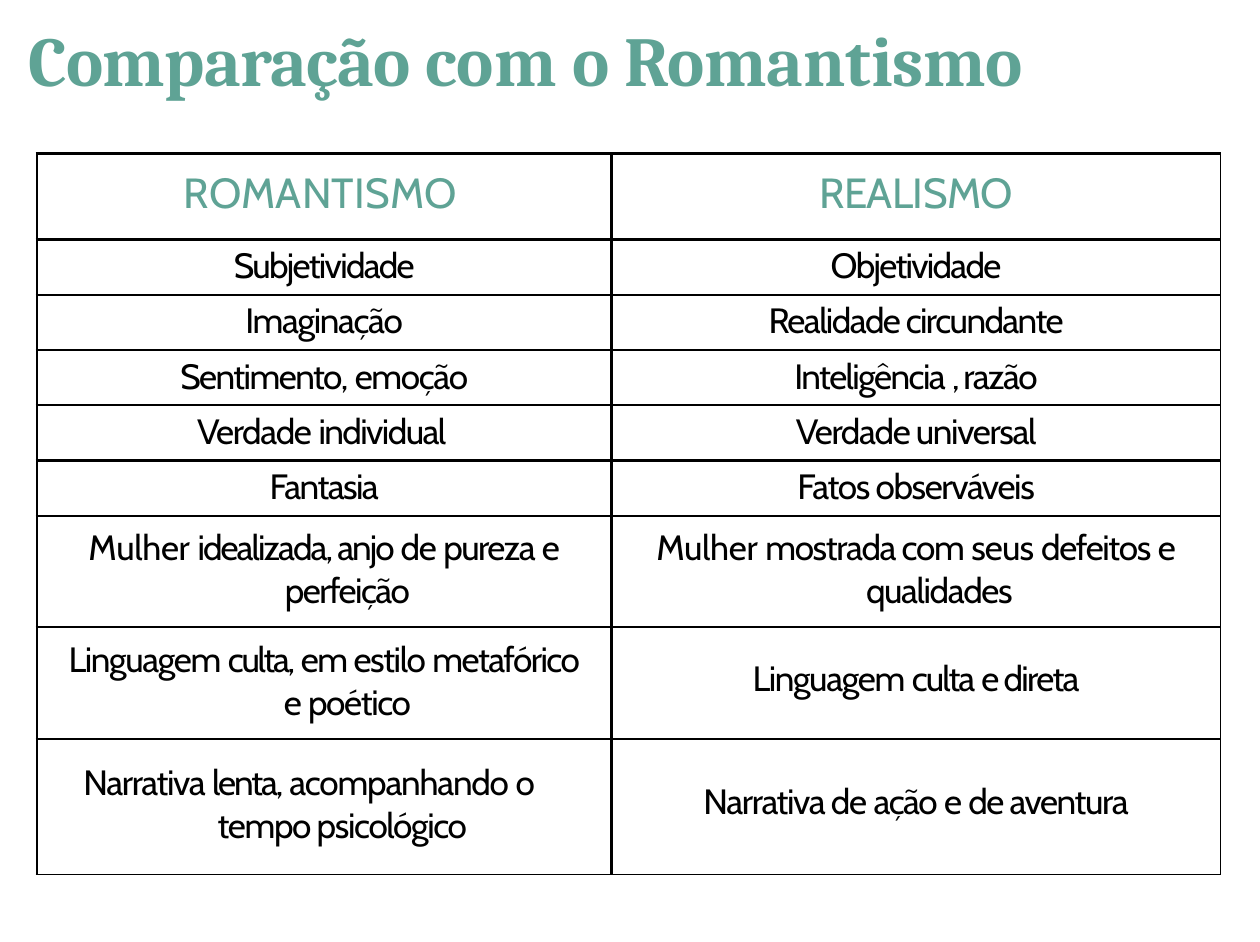
from dataclasses import dataclass

from lxml.etree import SubElement
from pptx import Presentation
from pptx.dml.color import RGBColor
from pptx.enum.text import MSO_ANCHOR, MSO_AUTO_SIZE, PP_ALIGN
from pptx.oxml.ns import qn
from pptx.slide import Slide
from pptx.table import _Cell
from pptx.text.text import _Paragraph
from pptx.util import Emu, Pt

SCALE = 6350


@dataclass(frozen=True)
class Theme:
    accent: str = "5FA395"
    ink: str = "000000"
    serif: str = "Cambria"
    sans: str = "Cabin"
    title: int = 40
    head: int = 24
    body: int = 20
    thick: float = 1.5
    thin: float = 1


@dataclass(frozen=True)
class Run:
    text: str
    space: float


@dataclass(frozen=True)
class Item:
    lines: tuple[tuple[Run, ...], ...]
    top: int = 6
    shift: int = 53
    hang: int = 0
    tail: int = 0


@dataclass(frozen=True)
class Row:
    high: int
    left: Item
    right: Item


THEME = Theme()


def px(count: int) -> Emu:
    return Emu(count * SCALE)


def line(*parts: str | float) -> tuple[Run, ...]:
    return tuple(Run(text, space) for text, space in zip(parts[::2], parts[1::2]))


def short(text: str, space: float, top: int = 6, tail: int = 0) -> Item:
    return Item((line(text, space),), top, tail=tail)


TITLE = line("Comparação ", -0.4, "com ", 0.2, "o ", -0.7, "Romantismo", -0.1)
WIDTHS = (655, 694)
ROWS = (
    Row(98, short("ROMANTISMO", 0.1, 17, 9), short("REALISMO", -0.3, 17)),
    Row(63, short("Subjetividade", -1), short("Objetividade", -1)),
    Row(63, short("Imaginação", -0.8), short("Realidade circundante", -0.9)),
    Row(
        63,
        Item((line("Sentimento, ", -0.9, "emoção", -0.8),)),
        Item((line("Inteligência ", -0.9, ", ", -2.4, "razão", -0.9),)),
    ),
    Row(
        63,
        Item((line("Verdade ", -0.8, "individual", -0.9),), tail=6),
        short("Verdade universal", -0.8),
    ),
    Row(63, short("Fantasia", -0.9), short("Fatos observáveis", -0.8)),
    Row(
        127,
        Item((
            line("Mulher ", -0.2, "idealizada, anjo ", -1.1, "de ", -0.8,
                 "pureza ", -0.9, "e", -1),
            line("perfeição", -0.9),
        ), top=13),
        Item((
            line("Mulher ", -0.2, "mostrada com ", -0.8, "seus ", -0.5,
                 "defeitos ", -0.8, "e", -1),
            line("qualidades", -0.8),
        ), top=13),
    ),
    Row(
        128,
        Item((
            line("Linguagem ", -0.8, "culta, ", -1.3, "em estilo ", -0.8,
                 "metafórico", -0.9),
            line("e ", -1, "poético", -0.8),
        ), top=13),
        Item((line("Linguagem ", -0.8, "culta ", -1.1, "e direta", -1),), top=35),
    ),
    Row(
        154,
        Item((
            line("Narrativa ", -0.8, "lenta, ", -1.2, "acompanhando ", -0.7,
                 "o ", -0.2, "tempo psicológico", -0.8),
        ), top=26, shift=206, hang=153),
        Item((
            line("Narrativa de ", -0.8, "ação ", -0.9, "e ", -1, "de aventura", -0.8),
        ), top=47),
    ),
)


def write(par: _Paragraph, text: str, *, size: int, color: str, face: str,
          space: float, bold: bool = False) -> None:
    run = par.add_run()
    run.text = text
    font = run.font
    font.size = Pt(size)
    font.name = face
    font.bold = bold
    font.color.rgb = RGBColor.from_string(color)
    run._r.get_or_add_rPr().set("spc", str(round(space * 100)))


def indent(par: _Paragraph, **sides: int) -> None:
    props = par._p.get_or_add_pPr()
    for side, size in sides.items():
        props.set(side, str(px(size)))


def edge(cell: _Cell, side: str, width: float) -> None:
    rule = SubElement(cell._tc.get_or_add_tcPr(), qn(f"a:ln{side}"), w=str(Pt(width)))
    fill = SubElement(rule, qn("a:solidFill"))
    SubElement(fill, qn("a:srgbClr"), val=THEME.ink)


def fill_cell(cell: _Cell, item: Item, size: int, color: str) -> None:
    cell.margin_left = cell.margin_right = cell.margin_bottom = 0
    cell.margin_top = px(item.top)
    cell.vertical_anchor = MSO_ANCHOR.TOP
    frame = cell.text_frame
    for spot, runs in enumerate(item.lines):
        par = frame.add_paragraph() if spot else frame.paragraphs[0]
        par.alignment = PP_ALIGN.LEFT if item.hang else PP_ALIGN.CENTER
        if spot or item.hang:
            indent(par, marL=item.shift, indent=-item.hang)
        if item.tail:
            indent(par, marR=item.tail)
        for run in runs:
            write(par, run.text, size=size, color=color, face=THEME.sans,
                  space=run.space)


def add_title(slide: Slide) -> None:
    title = slide.shapes.title
    title.left, title.top, title.width, title.height = map(px, (31, 18, 1354, 101))
    frame = title.text_frame
    frame.margin_left = frame.margin_right = frame.margin_bottom = 0
    frame.margin_top = px(1)
    frame.vertical_anchor = MSO_ANCHOR.TOP
    frame.word_wrap = True
    frame.auto_size = MSO_AUTO_SIZE.SHAPE_TO_FIT_TEXT
    par = frame.paragraphs[0]
    par.alignment = PP_ALIGN.LEFT
    indent(par, marL=2, indent=0)
    for run in TITLE:
        write(par, run.text, size=THEME.title, color=THEME.accent,
              face=THEME.serif, space=run.space, bold=True)


def add_grid(slide: Slide) -> None:
    high = sum(row.high for row in ROWS)
    grid = slide.shapes.add_table(
        len(ROWS), len(WIDTHS), px(42), px(175), px(sum(WIDTHS)), px(high)
    ).table
    grid.first_row = grid.horz_banding = False
    for col, width in zip(grid.columns, WIDTHS):
        col.width = px(width)
    for down, row in enumerate(ROWS):
        grid.rows[down].height = px(row.high)
        size, color = (THEME.body, THEME.ink) if down else (THEME.head, THEME.accent)
        for across, item in enumerate((row.left, row.right)):
            cell = grid.cell(down, across)
            fill_cell(cell, item, size, color)
            edge(cell, "L", THEME.thick)
            edge(cell, "R", THEME.thin if across else THEME.thick)
            edge(cell, "T", THEME.thick)
            edge(cell, "B", THEME.thin if down == len(ROWS) - 1 else THEME.thick)
            cell.fill.background()


def main() -> None:
    deck = Presentation()
    deck.slide_width, deck.slide_height = px(1436), px(1074)
    deck.element.find(qn("p:sldSz")).attrib.pop("type", None)
    slide = deck.slides.add_slide(deck.slide_layouts[5])
    add_title(slide)
    add_grid(slide)
    deck.save("out.pptx")


if __name__ == "__main__":
    main()
